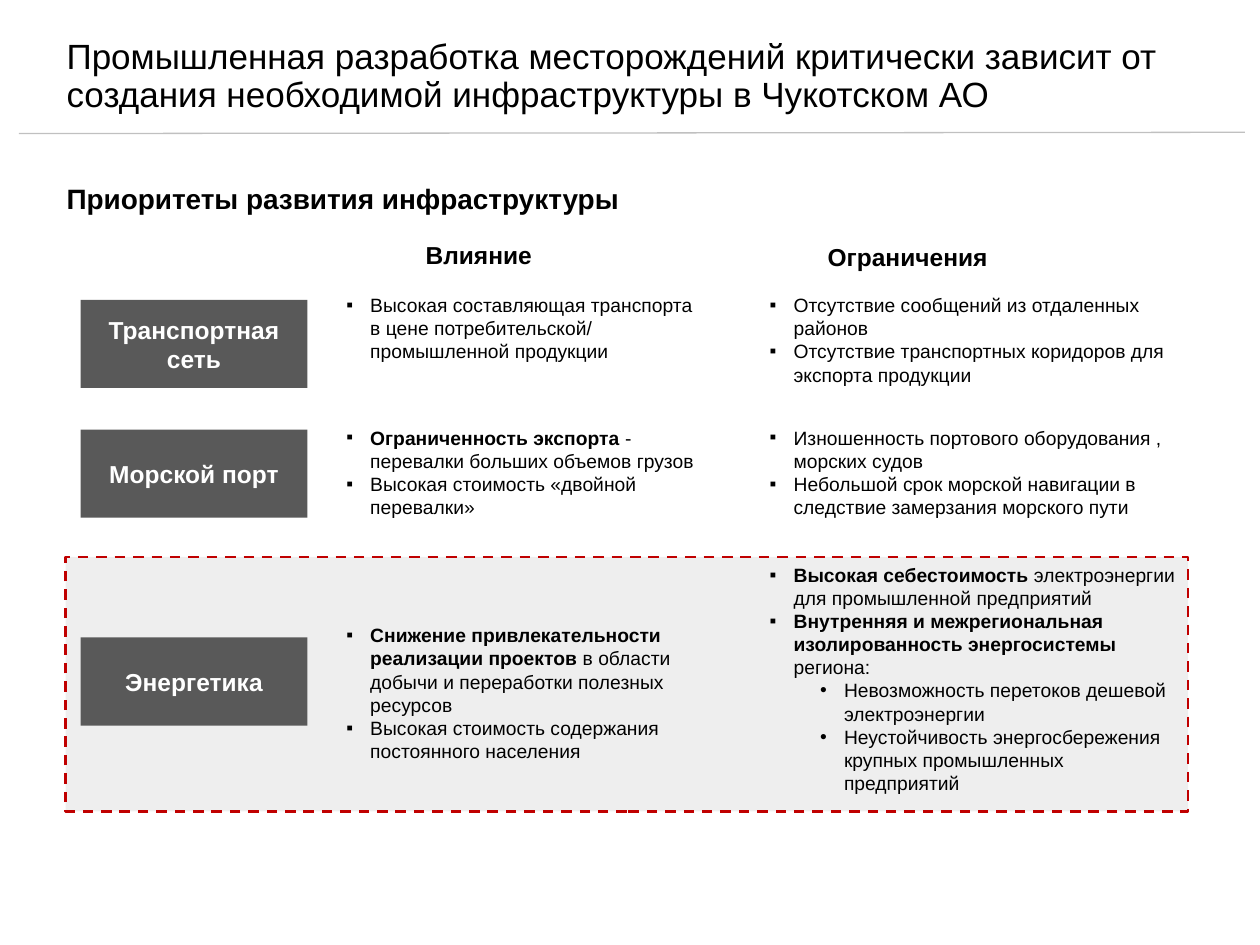
from lxml.etree import SubElement
from pptx import Presentation
from pptx.dml.color import RGBColor
from pptx.enum.dml import MSO_LINE
from pptx.enum.shapes import MSO_CONNECTOR, MSO_SHAPE
from pptx.enum.text import MSO_ANCHOR, PP_ALIGN
from pptx.oxml.ns import qn
from pptx.util import Inches, Pt

COLORS = {"text": "000000", "label": "595959", "label_text": "FFFFFF",
          "accent": "C00000", "rule": "C0C0C0"}
COLS, ROWS = 100, 75
CELL = Inches(0.1)
LABEL_X, LABEL_W, LABEL_H = 6.4, 18, 7
IMPACT_X, IMPACT_W = 26.5, 30
LIMIT_X, LIMIT_W = 60.1, 34.2
PANEL = (5.2, 44.2, 89.1, 20.2)

TITLE = ("Промышленная разработка месторождений критически зависит от "
         "создания необходимой инфраструктуры в Чукотском АО")
HEADINGS = [("Влияние", (32.8, 19.1, 15.3, 2.2)),
            ("Ограничения", (64.7, 19.3, 15.3, 2.2))]

# Each bullet is (level, bold lead, plain text).
AREAS = [
    {"name": "Транспортная сеть", "label_y": 23.8,
     "impact": (22.8, 9.5, [
         (0, "", "Высокая составляющая транспорта в цене потребительской/ промышленной продукции")]),
     "limits": (22.8, 9.5, [
         (0, "", "Отсутствие сообщений из отдаленных районов"),
         (0, "", "Отсутствие транспортных коридоров для экспорта продукции")])},
    {"name": "Морской порт", "label_y": 34.1,
     "impact": (33.3, 9.5, [
         (0, "Ограниченность экспорта ", "- перевалки больших объемов грузов"),
         (0, "", "Высокая стоимость «двойной перевалки»")]),
     "limits": (33.3, 9.5, [
         (0, "", "Изношенность портового оборудования , морских судов"),
         (0, "", "Небольшой срок морской навигации в следствие замерзания морского пути")])},
    {"name": "Энергетика", "label_y": 50.6,
     "impact": (49, 11.2, [
         (0, "Снижение привлекательности реализации проектов ",
          "в области добычи и переработки полезных ресурсов"),
         (0, "", "Высокая стоимость содержания постоянного населения")]),
     "limits": (44.2, 20.2, [
         (0, "Высокая себестоимость ", "электроэнергии для промышленной предприятий"),
         (0, "Внутренняя и межрегиональная изолированность энергосистемы ", "региона:"),
         (1, "", "Невозможность перетоков дешевой электроэнергии"),
         (1, "", "Неустойчивость энергосбережения крупных промышленных предприятий")])},
]


def rgb(name):
    """Return a palette colour."""
    return RGBColor.from_string(COLORS[name])


def grid(*cells):
    """Turn grid units into slide lengths."""
    return [round(c * CELL) for c in cells]


def style(r, size, color="text", bold=False):
    """Format one run."""
    r.font.name, r.font.size, r.font.bold = "Arial", Pt(size), bold
    r.font.color.rgb = rgb(color)


def add_text(slide, box, text, size, bold=False, anchor=MSO_ANCHOR.TOP, spacing=None):
    """Place a one-paragraph text box."""
    tf = slide.shapes.add_textbox(*grid(*box)).text_frame
    tf.word_wrap, tf.vertical_anchor = True, anchor
    p = tf.paragraphs[0]
    p.text, p.line_spacing = text, spacing
    style(p.runs[0], size, bold=bold)


def add_rect(slide, box, color):
    """Place a filled rectangle without outline or shadow."""
    sp = slide.shapes.add_shape(MSO_SHAPE.RECTANGLE, *grid(*box))
    sp.shadow.inherit = False
    sp.fill.solid()
    sp.fill.fore_color.rgb = rgb(color)
    sp.line.fill.background()
    return sp


def add_panel(slide, box):
    """Place the translucent dashed panel behind the key area."""
    sp = add_rect(slide, box, "label")
    clr = sp.fill._xPr.find(qn("a:solidFill"))[0]
    SubElement(clr, qn("a:alpha"), val="10000")
    sp.line.color.rgb = rgb("accent")
    sp.line.width, sp.line.dash_style = Pt(1.5), MSO_LINE.DASH


def add_label(slide, box, text):
    """Place the dark name plate of an area."""
    sp = add_rect(slide, box, "label")
    tf = sp.text_frame
    tf.word_wrap, tf.vertical_anchor = True, MSO_ANCHOR.MIDDLE
    p = tf.paragraphs[0]
    p.text, p.alignment = text, PP_ALIGN.CENTER
    style(p.runs[0], 14, "label_text", True)


def add_bullets(slide, box, items):
    """Place a bulleted list with optional bold leads."""
    tf = slide.shapes.add_textbox(*grid(*box)).text_frame
    tf.word_wrap = True
    for i, (level, lead, text) in enumerate(items):
        p = tf.add_paragraph() if i else tf.paragraphs[0]
        pPr = p._p.get_or_add_pPr()
        pPr.set("marL", str(Inches(0.19 + 0.4 * level)))
        pPr.set("indent", str(Inches(-0.19)))
        SubElement(pPr, qn("a:buFont"), typeface="Arial")
        SubElement(pPr, qn("a:buChar"), char="▪•"[level])
        for part, bold in ((lead, True), (text, False)):
            if part:
                r = p.add_run()
                r.text = part
                style(r, 11, bold=bold)


def add_area(slide, area):
    """Place one row: name plate, impact and limits."""
    add_label(slide, (LABEL_X, area["label_y"], LABEL_W, LABEL_H), area["name"])
    for key, x, w in (("impact", IMPACT_X, IMPACT_W), ("limits", LIMIT_X, LIMIT_W)):
        y, h, items = area[key]
        add_bullets(slide, (x, y, w, h), items)


def add_header(slide, box):
    """Place the slide title and the rule below it."""
    add_text(slide, box, TITLE, 20, anchor=MSO_ANCHOR.MIDDLE, spacing=0.9)
    rule = slide.shapes.add_connector(MSO_CONNECTOR.STRAIGHT, *grid(1.5, 10.6, 98.8, 10.5))
    rule.line.color.rgb, rule.line.width = rgb("rule"), Pt(0.75)
    SubElement(rule._element.spPr, qn("a:effectLst"))


def main():
    """Build and save the slide."""
    prs = Presentation()
    prs.slide_width, prs.slide_height = grid(COLS, ROWS)
    slide = prs.slides.add_slide(prs.slide_layouts[6])
    add_panel(slide, PANEL)
    add_header(slide, (4.3, 2.8, 91.9, 6.7))
    add_text(slide, (4.3, 13.9, 83.5, 4.7), "Приоритеты развития инфраструктуры", 16, True)
    for text, box in HEADINGS:
        add_text(slide, box, text, 14, True, MSO_ANCHOR.MIDDLE)
    for area in AREAS:
        add_area(slide, area)
    prs.save("out.pptx")


if __name__ == "__main__":
    main()
